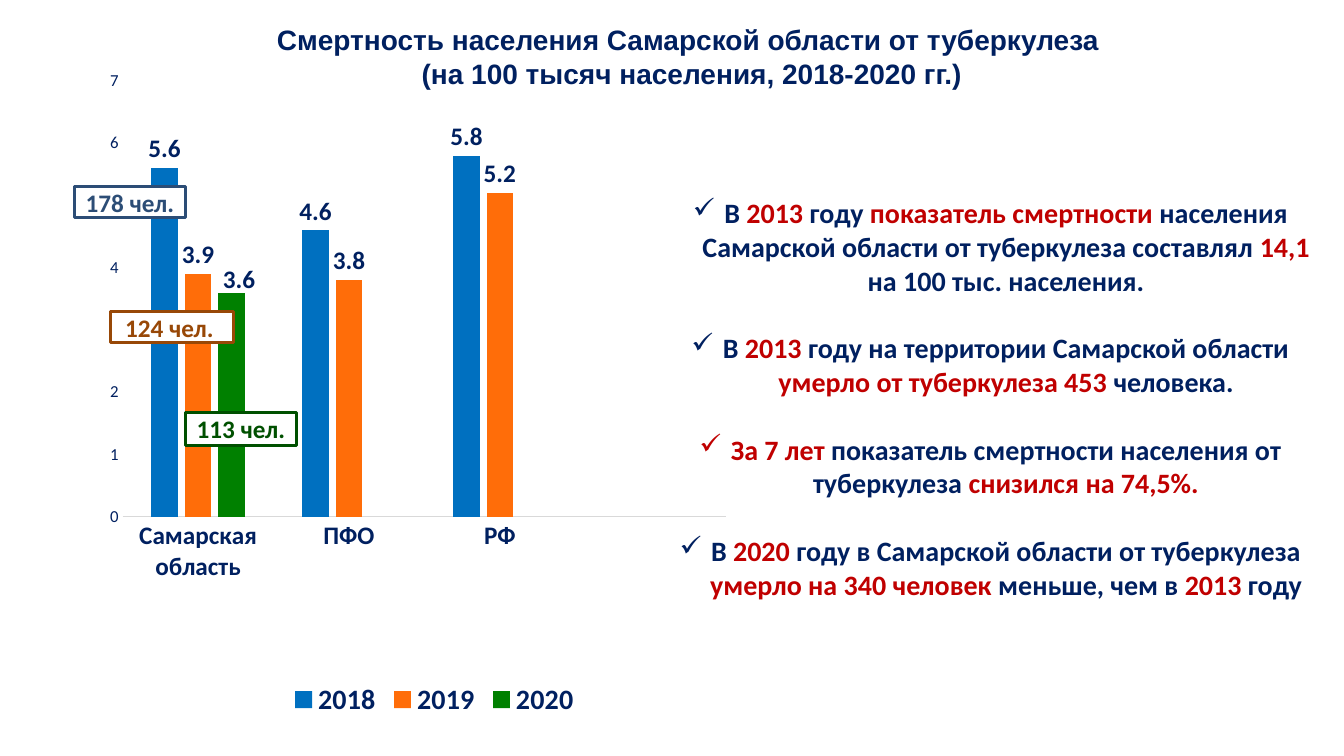
from dataclasses import dataclass

from lxml import etree
from pptx import Presentation
from pptx.chart.data import CategoryChartData
from pptx.dml.color import RGBColor
from pptx.enum.chart import XL_CHART_TYPE, XL_LABEL_POSITION, XL_LEGEND_POSITION, XL_TICK_MARK
from pptx.enum.shapes import MSO_SHAPE
from pptx.enum.text import MSO_ANCHOR, PP_ALIGN
from pptx.oxml.ns import qn
from pptx.util import Pt

COLUMNS = XL_CHART_TYPE.COLUMN_CLUSTERED
OUTSIDE = XL_LABEL_POSITION.OUTSIDE_END
BOTTOM = XL_LEGEND_POSITION.BOTTOM
NO_TICK = XL_TICK_MARK.NONE
RECT = MSO_SHAPE.RECTANGLE
TOP, MIDDLE = MSO_ANCHOR.TOP, MSO_ANCHOR.MIDDLE
CENTER = PP_ALIGN.CENTER


@dataclass(frozen=True)
class Theme:
    navy: str = "002060"
    red: str = "C00000"
    white: str = "FFFFFF"
    axis: str = "D9D9D9"
    series: tuple = ("0070C0", "FF6D09", "008000")
    callouts: tuple = ("2C4D76", "984807", "005000")
    head: str = "Arial"
    body: str = "Calibri"
    large: int = 20
    medium: int = 18
    small: int = 12


T = Theme()

TITLE = ("Смертность населения Самарской области от туберкулеза ",
         "(на 100 тысяч населения, 2018-2020 гг.)")
REGIONS = ("Самарская область", "ПФО", "РФ", "")
RATES = {
    "2018": (5.6, 4.6, 5.8, None),
    "2019": (3.9, 3.8, 5.2, None),
    "2020": (3.6, None, None, None),
}
CALLOUTS = (
    ("178 чел.", 53.3, 133.2, 79.2, 22.3),
    ("124 чел. ", 79.2, 222.5, 87.8, 22.3),
    ("113 чел. ", 132.5, 294.5, 79.2, 23.8),
)
FACTS = (
    (("В ", T.navy), ("2013", T.red), (" году ", T.navy),
     ("показатель смертности ", T.red),
     ("населения Самарской области от туберкулеза составлял ", T.navy),
     ("14,1", T.red), (" на 100 тыс. населения.", T.navy)),
    (("В ", T.navy), ("2013", T.red),
     (" году на территории Самарской области ", T.navy),
     ("умерло от туберкулеза 453 ", T.red), ("человека.", T.navy)),
    (("За 7 лет ", T.red),
     ("показатель смертности населения от туберкулеза ", T.navy),
     ("снизился на 74,5%.", T.red)),
    (("В ", T.navy), ("2020", T.red),
     (" году в Самарской области от туберкулеза ", T.navy),
     ("умерло на 340 человек", T.red), (" меньше, чем в ", T.navy),
     ("2013", T.red), (" году", T.navy)),
)


def rgb(value):
    return RGBColor.from_string(value)


def apply(target, **values):
    for name, value in values.items():
        setattr(target, name, value)


def style(font, size, color=T.navy, name=T.body, bold=True):
    apply(font, size=Pt(size), name=name, bold=bold)
    font.color.rgb = rgb(color)


def add_layout(parent, index, **values):
    for old in parent.findall(qn("c:layout")):
        parent.remove(old)
    layout = etree.Element(qn("c:layout"))
    manual = etree.SubElement(layout, qn("c:manualLayout"))
    for name, value in values.items():
        etree.SubElement(manual, qn("c:" + name)).set("val", str(value))
    parent.insert(index, layout)


def add_bullet(p, indent):
    pPr = p._p.get_or_add_pPr()
    pPr.set("marL", str(Pt(indent)))
    pPr.set("indent", str(-Pt(indent)))
    etree.SubElement(pPr, qn("a:buChar")).set("char", "✓")


def add_title(slide, box):
    tf = slide.shapes.add_textbox(*map(Pt, box)).text_frame
    apply(tf, word_wrap=True, vertical_anchor=TOP, margin_top=Pt(2))
    for i, line in enumerate(TITLE):
        p = tf.add_paragraph() if i else tf.paragraphs[0]
        p.alignment = CENTER
        r = p.add_run()
        r.text = line
        style(r.font, T.large, name=T.head)


def add_rates_chart(slide, box):
    data = CategoryChartData()
    data.categories = REGIONS
    for year, values in RATES.items():
        data.add_series(year, values)
    chart = slide.shapes.add_chart(COLUMNS, *map(Pt, box), data).chart
    apply(chart, has_title=False, has_legend=True)
    style(chart.font, 10, bold=False)
    apply(chart.legend, position=BOTTOM, include_in_layout=False)
    style(chart.legend.font, T.large)

    for axis, size, bold in ((chart.category_axis, T.medium, True),
                             (chart.value_axis, T.small, False)):
        apply(axis, has_major_gridlines=False, major_tick_mark=NO_TICK,
              minor_tick_mark=NO_TICK)
        style(axis.tick_labels.font, size, bold=bold)
    line = chart.category_axis.format.line
    line.color.rgb = rgb(T.axis)
    line.width = Pt(0.75)
    apply(chart.value_axis, minimum_scale=0, maximum_scale=7, major_unit=1)
    chart.value_axis.format.line.fill.background()

    plot = chart.plots[0]
    apply(plot, gap_width=219, overlap=-27, vary_by_categories=False)
    for series, color in zip(plot.series, T.series):
        series.format.fill.solid()
        series.format.fill.fore_color.rgb = rgb(color)
        labels = series.data_labels
        apply(labels, show_value=True, position=OUTSIDE)
        style(labels.font, T.medium)

    last = plot.series[-1]
    label = last.points[0].data_label
    label.position = OUTSIDE
    style(label.font, T.medium)
    add_layout(last.data_labels._element.find(qn("c:dLbl")), 1, x=0.01, y=0.01)
    plot_area = chart._chartSpace.find(".//" + qn("c:plotArea"))
    add_layout(plot_area, 0, layoutTarget="inner", xMode="edge", yMode="edge",
               x=0.092, y=0.031, w=0.79, h=0.658)


def add_facts(slide, box):
    tf = slide.shapes.add_textbox(*map(Pt, box)).text_frame
    apply(tf, word_wrap=True, vertical_anchor=MIDDLE, margin_top=Pt(25.6))
    for i, fact in enumerate(FACTS):
        p = tf.add_paragraph() if i else tf.paragraphs[0]
        apply(p, alignment=CENTER, space_before=Pt(24.4 if i else 0))
        add_bullet(p, 22.5)
        for text, color in fact:
            r = p.add_run()
            r.text = text
            style(r.font, T.large, color)


def add_callout(slide, box, text, color):
    sp = slide.shapes.add_shape(RECT, *map(Pt, box))
    sp.shadow.inherit = False
    sp.fill.solid()
    sp.fill.fore_color.rgb = rgb(T.white)
    sp.line.color.rgb = rgb(color)
    sp.line.width = Pt(2)
    tf = sp.text_frame
    apply(tf, word_wrap=True, vertical_anchor=MIDDLE)
    p = tf.paragraphs[0]
    p.alignment = CENTER
    r = p.add_run()
    r.text = text
    style(r.font, T.medium, color)


def main():
    prs = Presentation()
    apply(prs, slide_width=Pt(960), slide_height=Pt(540))
    slide = prs.slides.add_slide(prs.slide_layouts[6])
    add_title(slide, (154, 14.4, 680.4, 73.4))
    add_rates_chart(slide, (37.4, 43.2, 545.8, 473))
    add_facts(slide, (469.4, 73.4, 476, 400.3))
    for (text, *box), color in zip(CALLOUTS, T.callouts):
        add_callout(slide, box, text, color)
    prs.save("out.pptx")


if __name__ == "__main__":
    main()
